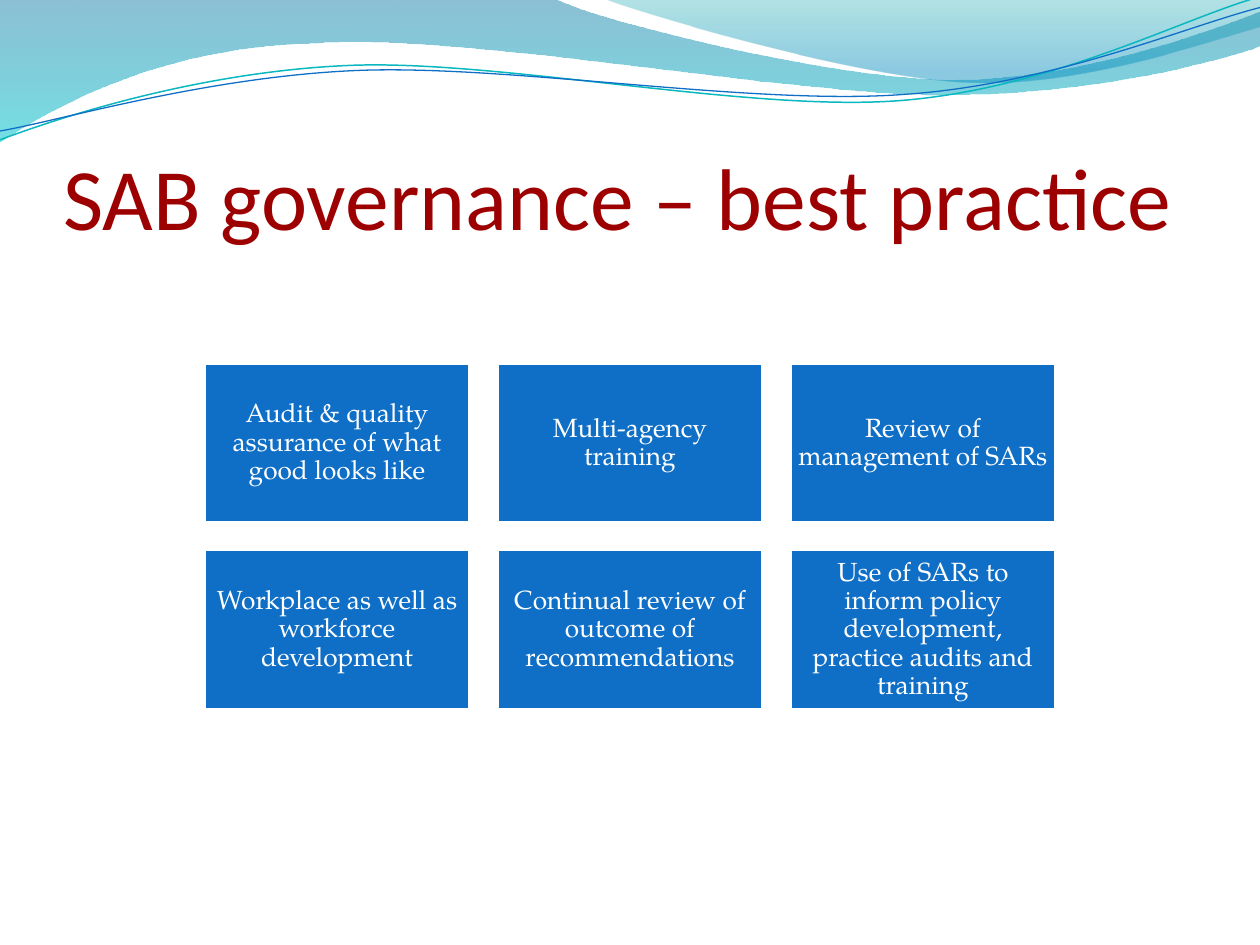
from dataclasses import dataclass

import pptx
import pptx.dml.color
import pptx.enum.dml
import pptx.enum.shapes
import pptx.enum.text
import pptx.oxml
import pptx.oxml.ns
import pptx.util
from lxml import etree

Inches = pptx.util.Inches
Pt = pptx.util.Pt
rgb = pptx.dml.color.RGBColor.from_string
qn = pptx.oxml.ns.qn
ANCHOR = pptx.enum.text.MSO_ANCHOR
ALIGN = pptx.enum.text.PP_ALIGN
AUTO_SIZE = pptx.enum.text.MSO_AUTO_SIZE


@dataclass(frozen=True)
class Theme:
    title_colour: str = "9C0001"
    box_colour: str = "0F6FC6"
    teal: str = "0AB8BF"
    white: str = "FFFFFF"
    title_font: str = "Calibri"
    box_font: str = "TeX Gyre Pagella"
    title_size: float = 50
    box_size: float = 15


THEME = Theme()

# Each outline is a start point, then segments: one point is a line, three a curve.
# Each gradient stop is position, colour and opacity in percent.
BANDS = [
    ([[(0, 0)], [(4.4, -0.01)],
      [(4.76, 0.17), (6.64, 0.63), (7.58, 0.63)],
      [(8.53, 0.63), (9.58, 0.26), (10, 0.09)], [(10.01, 0.36)],
      [(9.83, 0.44), (8.7, 0.76), (7.46, 0.75)],
      [(6.22, 0.75), (3.82, 0.28), (2.57, 0.34)],
      [(1.29, 0.36), (0.46, 0.83), (-0.01, 1.13)]],
     [(0, "0074A1", 45), (1, "00C6CF", 55)]),
    ([[(4.79, -0.01)],
      [(5.09, 0.11), (6.82, 0.62), (7.69, 0.65)],
      [(8.56, 0.69), (9.61, 0.32), (10, 0.21)], [(10, 0)]],
     [(0, "00A1A9", 30), (0.8, "008BBF", 45)]),
]
STRANDS = [
    ([[(0, 1.11)],
      [(0.48, 0.93), (1.58, 0.57), (2.77, 0.52)],
      [(3.95, 0.47), (5.93, 0.89), (7.13, 0.8)],
      [(8.33, 0.71), (9.38, 0.15), (9.98, -0.02)]], THEME.teal, 0.85),
    ([[(0, 1.04)],
      [(0.47, 0.96), (1.64, 0.61), (2.83, 0.56)],
      [(4.03, 0.51), (5.97, 0.84), (7.17, 0.75)],
      [(8.36, 0.67), (9.41, 0.21), (10, 0.06)]], THEME.box_colour, 0.75),
]
PRACTICES = [
    "Audit & quality assurance of what good looks like",
    "Multi-agency training",
    "Review of management of SARs",
    "Workplace as well as workforce development",
    "Continual review of outcome of recommendations",
    "Use of SARs to inform policy development, practice audits and training",
]


def apply_format(target, values):
    for name, value in values.items():
        setattr(target, name, value)


def add_curve(slide, outline, closed):
    """Build a freeform, turning each three-point segment into a Bézier curve."""
    (start,), *segments = outline
    builder = slide.shapes.build_freeform(*map(Inches, start), scale=1.0)
    points = [tuple(map(Inches, point)) for segment in segments for point in segment]
    builder.add_line_segments(points, close=closed)
    curve = builder.convert_to_shape()
    curve.shadow.inherit = False
    steps = iter(list(curve._element.iter(qn("a:lnTo"))))
    for segment in segments:
        first, *others = [next(steps) for _ in segment]
        if others:
            first.tag = qn("a:cubicBezTo")
            for step in others:
                first.append(step[0])
                step.getparent().remove(step)
    return curve


def add_band(slide, outline, stops):
    band = add_curve(slide, outline, closed=True)
    band.line.fill.background()
    band.fill.gradient()
    band.fill.gradient_angle = 270
    for stop, (position, colour, _) in zip(band.fill.gradient_stops, stops):
        stop.position = position
        stop.color.rgb = rgb(colour)
    colours = band._element.spPr.iter(qn("a:srgbClr"))
    for element, (_, _, opacity) in zip(colours, stops):
        etree.SubElement(element, qn("a:alpha"), val=str(opacity * 1000))


def add_strand(slide, outline, colour, width):
    strand = add_curve(slide, outline, closed=False)
    strand.fill.background()
    strand.line.color.rgb = rgb(colour)
    strand.line.width = Pt(width)


def write_text(shape, text, frame, paragraph, font, colour):
    shape.text_frame.text = text
    line = shape.text_frame.paragraphs[0]
    apply_format(shape.text_frame, frame)
    apply_format(line, paragraph)
    apply_format(line.runs[0].font, font)
    line.runs[0].font.color.rgb = rgb(colour)


def set_title(slide, text):
    title = slide.shapes.title
    apply_format(title, {"left": Inches(0.5), "top": Inches(0.77),
                         "width": Inches(9), "height": Inches(1.25)})
    write_text(
        title, text,
        {"vertical_anchor": ANCHOR.BOTTOM, "auto_size": AUTO_SIZE.NONE,
         "word_wrap": True, "margin_left": 0, "margin_right": 0},
        {"alignment": ALIGN.LEFT},
        {"name": THEME.title_font, "size": Pt(THEME.title_size)},
        THEME.title_colour)


def add_practice(slide, text, left, top):
    practice = slide.shapes.add_shape(
        pptx.enum.shapes.MSO_SHAPE.RECTANGLE,
        Inches(left), Inches(top), Inches(2.11), Inches(1.27))
    practice.shadow.inherit = False
    practice.fill.solid()
    practice.fill.fore_color.rgb = rgb(THEME.box_colour)
    practice.line.color.rgb = rgb(THEME.white)
    practice.line.width = Pt(2)
    margins = {f"margin_{side}": Inches(0.06)
               for side in ("left", "top", "right", "bottom")}
    write_text(
        practice, text,
        {"vertical_anchor": ANCHOR.MIDDLE, "word_wrap": True, **margins},
        {"alignment": ALIGN.CENTER, "line_spacing": 0.9},
        {"name": THEME.box_font, "size": Pt(THEME.box_size)},
        THEME.white)


def main():
    deck = pptx.Presentation()
    apply_format(deck, {"slide_width": Inches(10), "slide_height": Inches(7.5)})
    slide = deck.slides.add_slide(deck.slide_layouts.get_by_name("Title Only"))
    for band in BANDS:
        add_band(slide, *band)
    for strand in STRANDS:
        add_strand(slide, *strand)
    set_title(slide, "SAB governance – best practice")
    for index, text in enumerate(PRACTICES):
        row, column = divmod(index, 3)
        add_practice(slide, text, 1.62 + 2.325 * column, 2.88 + 1.48 * row)
    deck.save("out.pptx")


if __name__ == "__main__":
    main()
